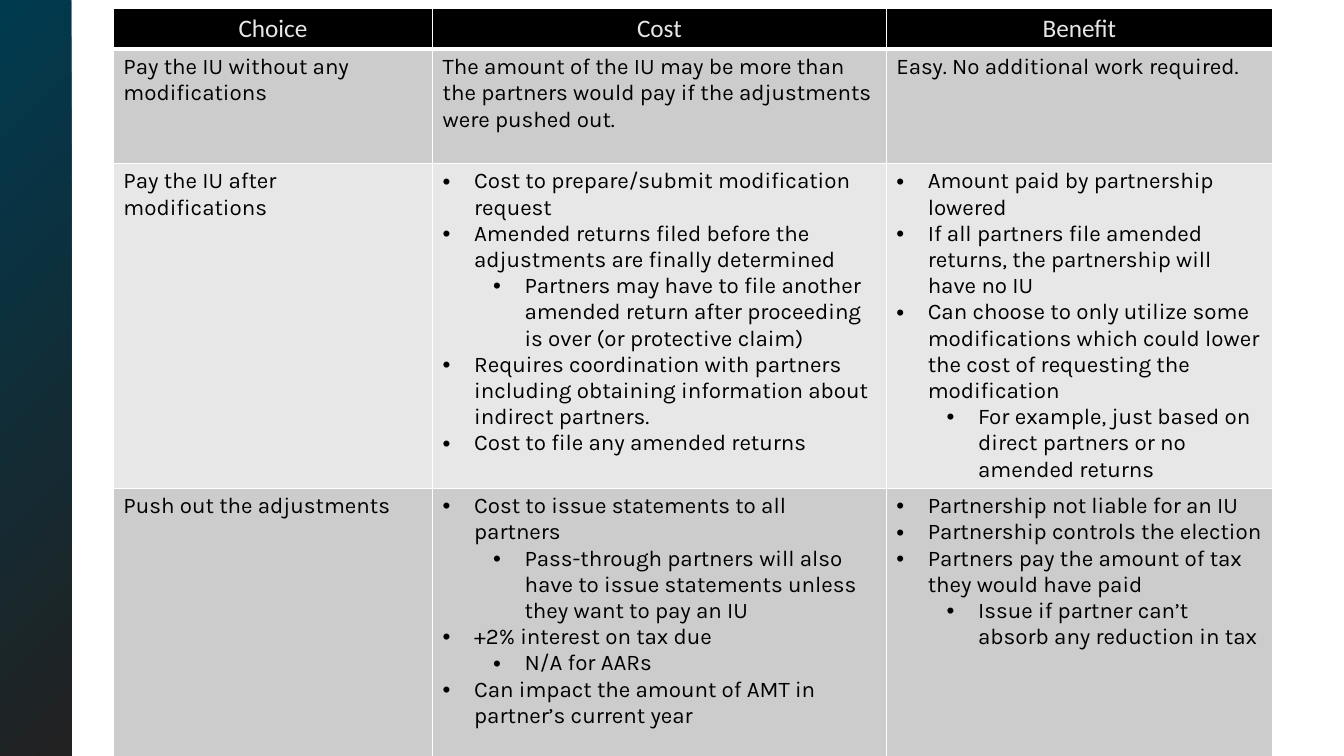
from lxml.etree import SubElement
from pptx import Presentation
from pptx.dml.color import RGBColor
from pptx.enum.shapes import MSO_SHAPE
from pptx.enum.text import PP_ALIGN
from pptx.oxml.ns import qn
from pptx.util import Pt

COLUMN_WIDTHS = [228, 324, 276]
ROW_HEIGHTS = [28.5, 81.5, 232, 192]
HEADINGS = ["Choice", "Cost", "Benefit"]
ROW_FILLS = ["000000", "CCCCCC", "E7E7E7", "CCCCCC"]
CHOICES = [
    (
        "Pay the IU without any modifications",
        "The amount of the IU may be more than the partners would pay if the adjustments were pushed out.",
        "Easy. No additional work required.",
    ),
    (
        "Pay the IU after modifications",
        [
            (0, "Cost to prepare/submit modification request"),
            (0, "Amended returns filed before the adjustments are finally determined"),
            (1, "Partners may have to file another amended return after proceeding is over (or protective claim)"),
            (0, "Requires coordination with partners including obtaining information about indirect partners."),
            (0, "Cost to file any amended returns"),
        ],
        [
            (0, "Amount paid by partnership lowered"),
            (0, "If all partners file amended returns, the partnership will have no IU"),
            (0, "Can choose to only utilize some modifications which could lower the cost of requesting the modification"),
            (1, "For example, just based on direct partners or no amended returns"),
        ],
    ),
    (
        "Push out the adjustments",
        [
            (0, "Cost to issue statements to all partners"),
            (1, "Pass-through partners will also have to issue statements unless they want to pay an IU"),
            (0, "+2% interest on tax due"),
            (1, "N/A for AARs"),
            (0, "Can impact the amount of AMT in partner’s current year"),
        ],
        [
            (0, "Partnership not liable for an IU"),
            (0, "Partnership controls the election"),
            (0, "Partners pay the amount of tax they would have paid"),
            (1, "Issue if partner can’t absorb any reduction in tax"),
        ],
    ),
]


def color(hex_string):
    return RGBColor.from_string(hex_string)


def add_side_panel(slide, left, top, width, height):
    panel = slide.shapes.add_shape(
        MSO_SHAPE.RECTANGLE, Pt(left), Pt(top), Pt(width), Pt(height)
    )
    panel.shadow.inherit = False
    panel.line.fill.background()
    panel.fill.gradient()
    panel.fill.gradient_angle = 315
    for stop, position, shade in zip(
        panel.fill.gradient_stops, (0, 1), ("003A4F", "212121")
    ):
        stop.position = position
        stop.color.rgb = color(shade)


def add_border(cell, side, width):
    line = SubElement(cell._tc.get_or_add_tcPr(), qn(f"a:ln{side}"), w=str(Pt(width)))
    fill = SubElement(line, qn("a:solidFill"))
    SubElement(fill, qn("a:srgbClr"), val="FFFFFF")


def add_bullet(paragraph, level):
    paragraph.level = level
    properties = paragraph._p.get_or_add_pPr()
    properties.set("marL", str(Pt(22.5 + 36 * level)))
    properties.set("indent", str(Pt(-22.5)))
    SubElement(properties, qn("a:buFont"), typeface="Arial")
    SubElement(properties, qn("a:buChar"), char="•")


def format_runs(paragraph, font_name, size, shade):
    for run in paragraph.runs:
        run.font.name = font_name
        run.font.size = Pt(size)
        run.font.bold = False
        run.font.color.rgb = color(shade)


def fill_cell(cell, content, row_index):
    is_header = row_index == 0
    for side in "LRTB":
        thick = (is_header and side == "B") or (row_index == 1 and side == "T")
        add_border(cell, side, 3 if thick else 1)
    cell.fill.solid()
    cell.fill.fore_color.rgb = color(ROW_FILLS[row_index])
    bulleted = isinstance(content, list)
    items = content if bulleted else [(0, content)]
    text_frame = cell.text_frame
    text_frame.text = "\n".join(text for _, text in items)
    for paragraph, (level, _) in zip(text_frame.paragraphs, items):
        if bulleted:
            add_bullet(paragraph, level)
        if is_header:
            paragraph.alignment = PP_ALIGN.CENTER
            format_runs(paragraph, "Calibri", 18, "E7E6E6")
        else:
            format_runs(paragraph, "Karla", 16, "000000")


def add_choice_table(slide, left, top):
    rows = [HEADINGS, *CHOICES]
    table = slide.shapes.add_table(
        len(rows), len(HEADINGS), Pt(left), Pt(top),
        Pt(sum(COLUMN_WIDTHS)), Pt(sum(ROW_HEIGHTS)),
    ).table
    table.horz_banding = False
    for column, width in zip(table.columns, COLUMN_WIDTHS):
        column.width = Pt(width)
    for row_index, (contents, height) in enumerate(zip(rows, ROW_HEIGHTS)):
        table.rows[row_index].height = Pt(height)
        for column_index, content in enumerate(contents):
            fill_cell(table.cell(row_index, column_index), content, row_index)


def main():
    presentation = Presentation()
    presentation.slide_width = Pt(960)
    presentation.slide_height = Pt(540)
    slide = presentation.slides.add_slide(presentation.slide_layouts[6])
    add_side_panel(slide, 0, 0, 51, 540)
    add_choice_table(slide, 81, 6)
    presentation.save("out.pptx")


if __name__ == "__main__":
    main()
